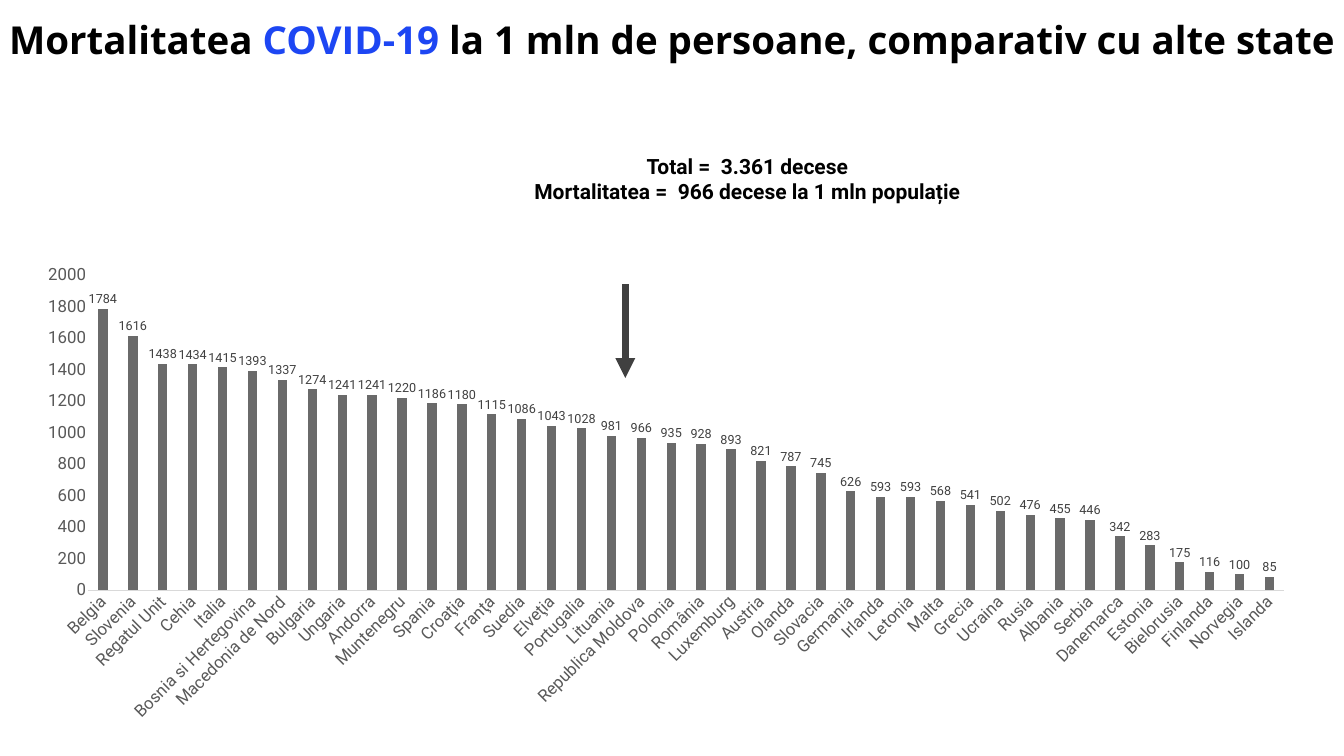
from dataclasses import dataclass

from lxml import etree
from pptx import Presentation
from pptx.chart.data import CategoryChartData
from pptx.dml.color import RGBColor
from pptx.enum.chart import XL_CHART_TYPE, XL_LABEL_POSITION, XL_TICK_MARK
from pptx.enum.shapes import MSO_CONNECTOR
from pptx.enum.text import MSO_ANCHOR, MSO_AUTO_SIZE, PP_ALIGN
from pptx.oxml import parse_xml
from pptx.oxml.ns import nsdecls, qn
from pptx.util import Inches, Pt

COLUMNS = XL_CHART_TYPE.COLUMN_CLUSTERED
OUTSIDE = XL_LABEL_POSITION.OUTSIDE_END
NO_TICKS = XL_TICK_MARK.NONE
STRAIGHT = MSO_CONNECTOR.STRAIGHT
MIDDLE = MSO_ANCHOR.MIDDLE
CENTER = PP_ALIGN.CENTER
FIXED = MSO_AUTO_SIZE.NONE

WIDTH, HEIGHT = Inches(26.67), Inches(15)
TITLE_ONLY = 5


@dataclass(frozen=True)
class Theme:
    heading_font: str = "Open Sans"
    body_font: str = "Roboto"
    ink: str = "000000"
    accent: str = "1D46F3"
    bar: str = "6A6A6A"
    dark: str = "404040"
    axis_text: str = "595959"
    axis_line: str = "D9D9D9"
    title_size: float = 55
    summary_size: float = 30
    axis_size: float = 24
    value_size: float = 18


@dataclass(frozen=True)
class Area:
    """Position and size as percentages of the slide's width and height."""
    left: float
    top: float
    width: float
    height: float

    def box(self) -> tuple[int, int, int, int]:
        return (int(WIDTH * self.left / 100), int(HEIGHT * self.top / 100),
                int(WIDTH * self.width / 100), int(HEIGHT * self.height / 100))


@dataclass(frozen=True)
class Span:
    text: str
    color: str


THEME = Theme()
TITLE_AREA = Area(0, 3, 100, 10.53)
CHART_AREA = Area(1.76, 33.87, 95.73, 63.13)
SUMMARY_AREA = Area(38.1, 19.93, 35.02, 7.47)
ARROW_AREA = Area(46.53, 37.6, 0, 12.4)
PLOT_SHARES = {"x": 0.05, "y": 0.04, "w": 0.93, "h": 0.66}

TITLE = [
    Span("Mortalitatea ", THEME.ink),
    Span("COVID-19", THEME.accent),
    Span(" la 1 mln de persoane, comparativ cu alte state", THEME.ink),
]
SUMMARY = ["Total =  3.361 decese",
           "Mortalitatea =  966 decese la 1 mln populație"]
DEATHS_PER_MILLION = {
    "Belgia": 1784, "Slovenia": 1616, "Regatul Unit": 1438, "Cehia": 1434,
    "Italia": 1415, "Bosnia si Hertegovina": 1393,
    "Macedonia de Nord": 1337, "Bulgaria": 1274, "Ungaria": 1241,
    "Andorra": 1241, "Muntenegru": 1220, "Spania": 1186, "Croaţia": 1180,
    "Franţa": 1115, "Suedia": 1086, "Elveţia": 1043, "Portugalia": 1028,
    "Lituania": 981, "Republica Moldova": 966, "Polonia": 935,
    "România": 928, "Luxemburg": 893, "Austria": 821, "Olanda": 787,
    "Slovacia": 745, "Germania": 626, "Irlanda": 593, "Letonia": 593,
    "Malta": 568, "Grecia": 541, "Ucraina": 502, "Rusia": 476,
    "Albania": 455, "Serbia": 446, "Danemarca": 342, "Estonia": 283,
    "Bielorusia": 175, "Finlanda": 116, "Norvegia": 100, "Islanda": 85,
}


def apply(target, **values) -> None:
    for attribute, value in values.items():
        setattr(target, attribute, value)


def style_font(font, name: str, size: float, color: str,
               bold: bool = False) -> None:
    apply(font, name=name, size=Pt(size), bold=bold)
    font.color.rgb = RGBColor.from_string(color)


def write_lines(shape, lines: list[list[Span]], font: str, size: float,
                bottom: float = 0.06) -> None:
    frame = shape.text_frame
    inset = Inches(0.06)
    apply(frame, word_wrap=True, auto_size=FIXED, vertical_anchor=MIDDLE,
          margin_left=inset, margin_right=inset, margin_top=inset,
          margin_bottom=Inches(bottom))
    for index, spans in enumerate(lines):
        line = frame.add_paragraph() if index else frame.paragraphs[0]
        line.alignment = CENTER
        for span in spans:
            run = line.add_run()
            run.text = span.text
            style_font(run.font, font, size, span.color, bold=True)


def set_plot_area(chart) -> None:
    plot_area = chart.element.find(f".//{qn('c:plotArea')}")
    for existing in plot_area.findall(qn("c:layout")):
        plot_area.remove(existing)
    modes = '<c:xMode val="edge"/><c:yMode val="edge"/>'
    shares = "".join(f'<c:{key} val="{share}"/>'
                     for key, share in PLOT_SHARES.items())
    plot_area.insert(0, parse_xml(
        f'<c:layout {nsdecls("c")}><c:manualLayout>'
        f'<c:layoutTarget val="inner"/>{modes}{shares}'
        '</c:manualLayout></c:layout>'))


def add_mortality_chart(slide) -> None:
    data = CategoryChartData()
    data.categories = list(DEATHS_PER_MILLION)
    data.add_series("Series 1", list(DEATHS_PER_MILLION.values()))
    chart = slide.shapes.add_chart(COLUMNS, *CHART_AREA.box(), data).chart
    apply(chart, has_legend=False, has_title=False)
    style_font(chart.font, THEME.body_font, THEME.axis_size, THEME.ink)
    set_plot_area(chart)

    # Bars and their values
    plot = chart.plots[0]
    apply(plot, gap_width=219, overlap=-27, vary_by_categories=False,
          has_data_labels=True)
    bars = plot.series[0].format.fill
    bars.solid()
    bars.fore_color.rgb = RGBColor.from_string(THEME.bar)
    apply(plot.data_labels, show_value=True, position=OUTSIDE)
    style_font(plot.data_labels.font, THEME.body_font, THEME.value_size,
               THEME.dark)

    # Axes
    countries, deaths = chart.category_axis, chart.value_axis
    for axis in (countries, deaths):
        apply(axis, major_tick_mark=NO_TICKS, minor_tick_mark=NO_TICKS,
              has_major_gridlines=False)
        style_font(axis.tick_labels.font, THEME.body_font, THEME.axis_size,
                   THEME.axis_text)
    apply(deaths, minimum_scale=0, maximum_scale=2000, major_unit=200)
    deaths.format.line.fill.background()
    countries.format.line.width = Pt(0.75)
    countries.format.line.color.rgb = RGBColor.from_string(THEME.axis_line)
    label_body = countries._element.find(f"{qn('c:txPr')}/{qn('a:bodyPr')}")
    label_body.set("rot", str(-45 * 60000))
    label_body.set("vert", "horz")


def add_arrow(slide, area: Area) -> None:
    left, top, width, height = area.box()
    arrow = slide.shapes.add_connector(STRAIGHT, left, top,
                                       left + width, top + height)
    arrow.line.width = Pt(9.5)
    arrow.line.color.rgb = RGBColor.from_string(THEME.dark)
    etree.SubElement(arrow.line._get_or_add_ln(), qn("a:tailEnd"),
                     type="triangle")
    etree.SubElement(arrow._element.spPr, qn("a:effectLst"))


def main() -> None:
    deck = Presentation()
    apply(deck, slide_width=WIDTH, slide_height=HEIGHT)
    slide = deck.slides.add_slide(deck.slide_layouts[TITLE_ONLY])

    add_mortality_chart(slide)

    # Title, raised within its box by a deep bottom inset
    title = slide.shapes.title
    left, top, width, height = TITLE_AREA.box()
    apply(title, left=left, top=top, width=width, height=height)
    write_lines(title, [TITLE], THEME.heading_font, THEME.title_size,
                bottom=1)

    # Pointer and summary for Republica Moldova
    add_arrow(slide, ARROW_AREA)
    summary = slide.shapes.add_textbox(*SUMMARY_AREA.box())
    write_lines(summary, [[Span(line, THEME.ink)] for line in SUMMARY],
                THEME.body_font, THEME.summary_size)

    deck.save("out.pptx")


if __name__ == "__main__":
    main()
